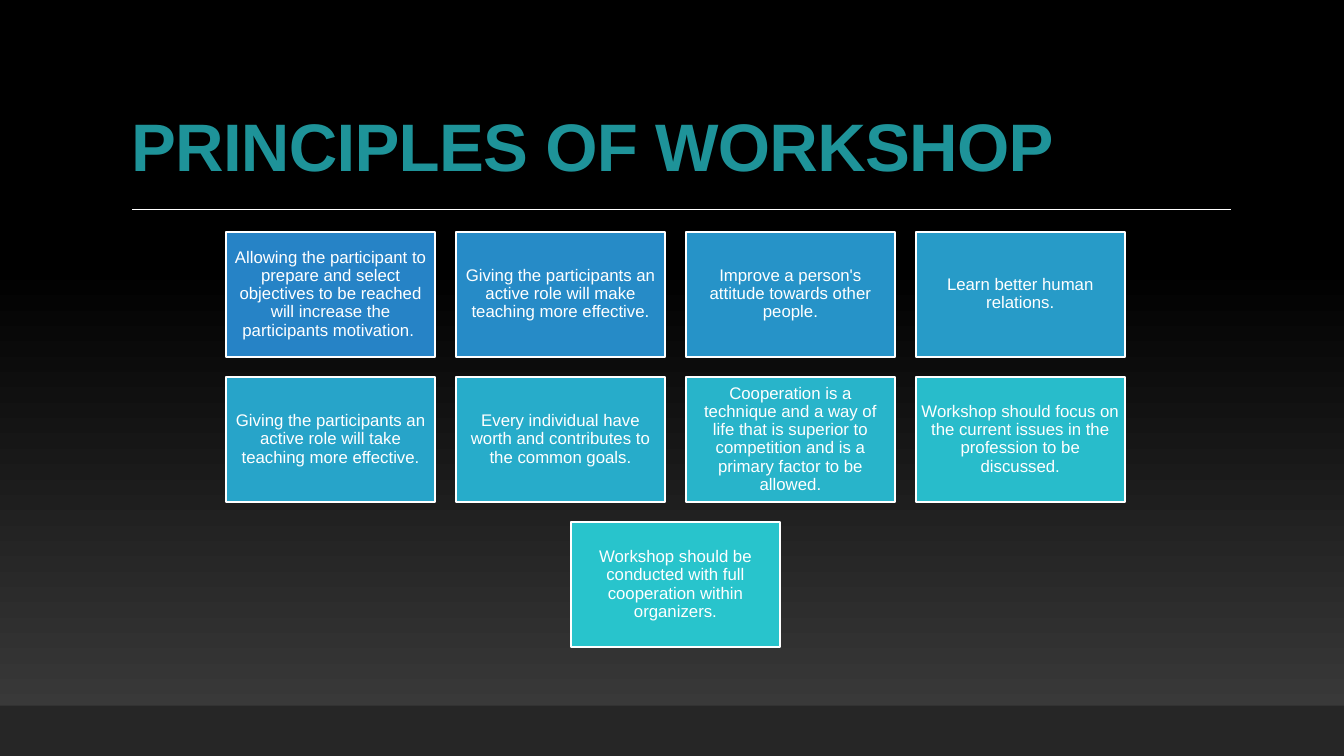
from lxml import etree
from pptx import Presentation
from pptx import util as u
from pptx.dml.color import RGBColor
from pptx.enum import shapes, text
from pptx.oxml.ns import qn

COLOURS = {
    "black": "000000",
    "charcoal": "3F3F3F",
    "footer": "262626",
    "title": "1E9399",
    "white": "FFFFFF",
    "first_card": "2683C6",
    "last_card": "28C4CC",
}
FONT = "Arial"
SLIDE_WIDTH, SLIDE_HEIGHT = 13.33, 7.5
CARD_WIDTH, CARD_HEIGHT = 2.07, 1.24
COLUMN_GAP, ROW_GAP = 0.21, 0.2
GRID_CENTRE, GRID_TOP = 6.7, 2.3
COLUMNS = 4

PRINCIPLES = [
    "Allowing the participant to prepare and select objectives to be reached "
    "will increase the participants motivation. ",
    "Giving the participants an active role will make teaching more effective.",
    "Improve a person's attitude towards other people.",
    "Learn better human relations.",
    "Giving the participants an active role will take teaching more effective.",
    "Every individual have worth and contributes to the common goals.",
    "Cooperation is a technique and a way of life that is superior to "
    "competition and is a primary factor to be allowed.",
    "Workshop should focus on the current issues in the profession to be discussed.",
    "Workshop should be conducted with full cooperation within organizers.",
]


def blend(start, end, share):
    """Return the hex colour lying the given share of the way from start to end."""
    pairs = zip(bytes.fromhex(start), bytes.fromhex(end))
    return "".join(f"{round(a + (b - a) * share):02X}" for a, b in pairs)


class WorkshopSlide:
    def __init__(self, deck):
        self.page = deck.slides.add_slide(deck.slide_layouts[5])

    def fade(self, fill):
        """Fill with charcoal at the bottom, fading to black higher up."""
        fill.gradient()
        fill.gradient_angle = 90
        stops = zip(fill.gradient_stops, ((0, "charcoal"), (0.65, "black")))
        for stop, (position, name) in stops:
            stop.position = position
            stop.color.rgb = RGBColor.from_string(COLOURS[name])

    def rectangle(self, left, top, width, height, colour=None):
        box = self.page.shapes.add_shape(
            shapes.MSO_SHAPE.RECTANGLE,
            *map(u.Inches, (left, top, width, height)))
        box.shadow.inherit = False
        box.line.fill.background()
        if colour:
            box.fill.solid()
            box.fill.fore_color.rgb = RGBColor.from_string(colour)
        return box

    def backdrop(self):
        self.fade(self.page.background.fill)
        panel = self.rectangle(0, 0, SLIDE_WIDTH, SLIDE_HEIGHT)
        self.fade(panel.fill)
        self.page.shapes.title.element.addprevious(panel.element)

    def set_text(self, frame, words, size, colour, align, anchor, bold=False):
        frame.text = words
        frame.word_wrap = True
        frame.auto_size = text.MSO_AUTO_SIZE.NONE
        frame.vertical_anchor = anchor
        para = frame.paragraphs[0]
        para.alignment = align
        para.line_spacing = 0.9
        font = para.runs[0].font
        font.name, font.size, font.bold = FONT, u.Pt(size), bold
        font.color.rgb = RGBColor.from_string(colour)

    def title(self, words):
        box = self.page.shapes.title
        box.left, box.top, box.width, box.height = map(
            u.Inches, (1.2, 0.31, 11, 1.59))
        self.set_text(box.text_frame, words, 48, COLOURS["title"],
                      text.PP_ALIGN.LEFT, text.MSO_ANCHOR.BOTTOM, bold=True)
        for properties in box.element.iter(qn("a:rPr")):
            properties.set("spc", "-50")

    def rule(self, left, right, top):
        line = self.page.shapes.add_connector(
            shapes.MSO_CONNECTOR.STRAIGHT,
            *map(u.Inches, (left, top, right, top)))
        line.line.color.rgb = RGBColor.from_string(COLOURS["white"])
        line.line.width = u.Pt(1)
        etree.SubElement(line.element.spPr, qn("a:effectLst"))

    def card(self, left, top, words, colour):
        box = self.rectangle(left, top, CARD_WIDTH, CARD_HEIGHT, colour)
        box.line.color.rgb = RGBColor.from_string(COLOURS["white"])
        box.line.width = u.Pt(1.25)
        frame = box.text_frame
        frame.margin_left = frame.margin_right = u.Inches(0.05)
        frame.margin_top = frame.margin_bottom = u.Inches(0.05)
        self.set_text(frame, words, 12, COLOURS["white"],
                      text.PP_ALIGN.CENTER, text.MSO_ANCHOR.MIDDLE)

    def cards(self, principles):
        """Lay the cards out in rows, each row centred on the grid."""
        for index, words in enumerate(principles):
            row, column = divmod(index, COLUMNS)
            count = min(COLUMNS, len(principles) - row * COLUMNS)
            row_width = count * (CARD_WIDTH + COLUMN_GAP) - COLUMN_GAP
            left = GRID_CENTRE - row_width / 2 + column * (CARD_WIDTH + COLUMN_GAP)
            top = GRID_TOP + row * (CARD_HEIGHT + ROW_GAP)
            colour = blend(COLOURS["first_card"], COLOURS["last_card"],
                           index / (len(principles) - 1))
            self.card(left, top, words, colour)


def main():
    deck = Presentation()
    deck.slide_width = u.Inches(SLIDE_WIDTH)
    deck.slide_height = u.Inches(SLIDE_HEIGHT)
    slide = WorkshopSlide(deck)
    slide.backdrop()
    slide.title("PRINCIPLES OF WORKSHOP")
    slide.rule(1.31, 12.21, 2.08)
    slide.rectangle(0, 7, SLIDE_WIDTH, 0.5, COLOURS["footer"])
    slide.cards(PRINCIPLES)
    deck.save("out.pptx")


if __name__ == "__main__":
    main()
